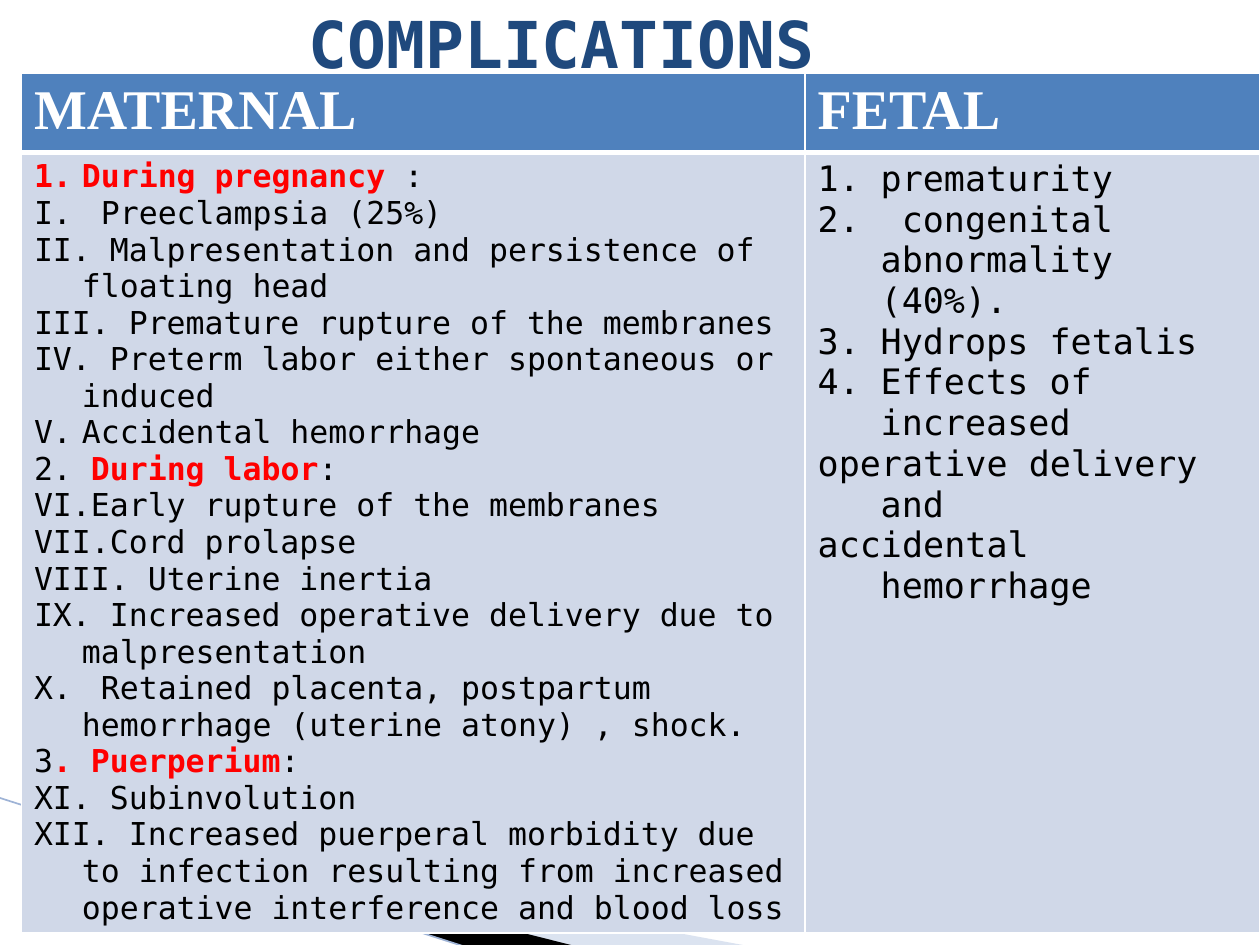
from lxml import etree
from pptx import Presentation
from pptx import util as u
from pptx.dml import color
from pptx.enum import shapes, text
from pptx.oxml import ns

COLORS = {
    "title": "1F497D", "header": "4F81BD", "body": "D0D8E8", "white": "FFFFFF",
    "black": "000000", "accent": "FF0000", "wave": "A7B9DB", "line": "9EB3D6",
}
MONO = "DejaVu Sans Mono"
SERIF = "Times New Roman"
PLAIN = {"name": MONO, "bold": False}
STRONG = {"name": MONO, "bold": True}
HEADING = {"name": SERIF, "bold": True, "size": u.Pt(32)}

PREGNANCY = [
    " Preeclampsia (25%)",
    " Malpresentation and persistence of floating head",
    " Premature rupture of the membranes",
    " Preterm labor either spontaneous or induced",
    "Accidental hemorrhage",
]
LABOR = [
    "Early rupture of the membranes",
    "Cord prolapse",
    " Uterine inertia",
    " Increased operative delivery due to malpresentation",
    " Retained placenta, postpartum hemorrhage (uterine atony) , shock.",
]
PUERPERIUM = [
    " Subinvolution",
    " Increased puerperal morbidity due to infection resulting from "
    "increased operative interference and blood loss",
]
FETAL = ["prematurity", " congenital abnormality (40%).", "Hydrops fetalis", "Effects of increased"]
FETAL_MORE = ["operative delivery and", "accidental hemorrhage"]


def rgb(name):
    return color.RGBColor.from_string(COLORS[name])


def child(parent, tag, **values):
    return etree.SubElement(parent, ns.qn(tag), {key: str(value) for key, value in values.items()})


def add_span(para, words, values, tint):
    span = para.add_run()
    span.text = words
    for key, value in values.items():
        setattr(span.font, key, value)
    span.font.color.rgb = rgb(tint)


def add_para(frame, spans, size, hang=0, number=None, start=1):
    first = frame.paragraphs[0]
    para = frame.add_paragraph() if first.runs else first
    props = para._p.get_or_add_pPr()
    props.set("marL", str(u.Inches(hang)))
    props.set("indent", str(-u.Inches(hang)))
    if number:
        child(props, "a:buAutoNum", type=number, startAt=start)
    for words, values, tint in spans:
        add_span(para, words, {"size": u.Pt(size), **values}, tint)


def add_list(frame, lines, size, hang, number=None, start=1):
    for line in lines:
        add_para(frame, [(line, PLAIN, "black")], size, hang, number, start)


def style_cell(cell, fill, top, bottom):
    props = cell._tc.get_or_add_tcPr()
    for side, width in {"L": 1, "R": 1, "T": top, "B": bottom}.items():
        line = child(props, f"a:ln{side}", w=u.Pt(width))
        child(child(line, "a:solidFill"), "a:srgbClr", val=COLORS["white"])
    cell.fill.solid()
    cell.fill.fore_color.rgb = rgb(fill)


def add_wave(page, points, fill, opacity=100):
    corners = [(u.Inches(x), u.Inches(y)) for x, y in points]
    builder = page.shapes.build_freeform(*corners[0])
    builder.add_line_segments(corners[1:], close=True)
    wave = builder.convert_to_shape()
    wave.shadow.inherit = False
    wave.fill.solid()
    wave.fill.fore_color.rgb = rgb(fill)
    wave.line.fill.background()
    if opacity < 100:
        tint = wave._element.spPr.find(ns.qn("a:solidFill"))[0]
        child(tint, "a:alpha", val=opacity * 1000)


def add_line(page, start, end):
    line = page.shapes.add_connector(
        shapes.MSO_CONNECTOR.STRAIGHT, *(u.Inches(value) for value in start + end))
    line.line.color.rgb = rgb("line")
    line.line.width = u.Pt(0.95)
    child(line._element.spPr, "a:effectLst")


def fill_maternal(frame):
    size, hang, roman = 18, 0.38, "romanUcPeriod"
    colon = (":", PLAIN, "black")
    add_para(frame, [("During pregnancy ", STRONG, "accent"), colon], size, hang, "arabicPeriod")
    add_list(frame, PREGNANCY, size, hang, roman)
    add_para(frame, [("2. ", PLAIN, "black"), ("During labor", STRONG, "accent"), colon], size, hang)
    add_list(frame, LABOR, size, hang, roman, len(PREGNANCY) + 1)
    add_para(frame, [("3", PLAIN, "black"), (". Puerperium", STRONG, "accent"), colon], size)
    add_list(frame, PUERPERIUM, size, hang, roman, len(PREGNANCY + LABOR) + 1)


def fill_fetal(frame):
    add_list(frame, FETAL, 20, 0.5, "arabicPeriod")
    add_list(frame, FETAL_MORE, 20, 0.5)


def add_complications(page):
    box = [u.Inches(value) for value in (0.17, 0.58, 9.83, 6.62)]
    table = page.shapes.add_table(2, 2, *box).table
    for column, width in zip(table.columns, (6.22, 3.61)):
        column.width = u.Inches(width)
    for row, height in zip(table.rows, (0.63, 5.99)):
        row.height = u.Inches(height)
    for index, (heading, fill_body) in enumerate(
            [("MATERNAL", fill_maternal), ("FETAL", fill_fetal)]):
        header, body = table.cell(0, index), table.cell(1, index)
        style_cell(header, "header", 1, 3)
        style_cell(body, "body", 3, 1)
        add_span(header.text_frame.paragraphs[0], heading, HEADING, "white")
        fill_body(body.text_frame)


def set_title(page, words):
    title = page.shapes.title
    place = {"left": 0.5, "top": 0, "width": 9, "height": 0.67}
    for key, value in place.items():
        setattr(title, key, u.Inches(value))
    frame = title.text_frame
    frame.word_wrap = True
    frame.auto_size = text.MSO_AUTO_SIZE.NONE
    frame.vertical_anchor = text.MSO_ANCHOR.MIDDLE
    para = frame.paragraphs[0]
    para.alignment = text.PP_ALIGN.LEFT
    para._p.get_or_add_pPr().set("marL", str(u.Inches(1.85)))
    add_span(para, words, {**STRONG, "size": u.Pt(36.9)}, "title")
    page.shapes._spTree.append(title._element)


def main():
    deck = Presentation()
    deck.slide_width, deck.slide_height = u.Inches(10), u.Inches(7.5)
    page = deck.slides.add_slide(deck.slide_layouts[5])
    add_wave(page, [(0.55, 6.51), (5.95, 7.51), (4.56, 7.51), (0.55, 6.5)], "wave", 40)
    add_wave(page, [(0.53, 6.49), (4.57, 7.51), (3.72, 7.52), (0.54, 6.5)], "black")
    add_line(page, (-0.01, 6.33), (3.71, 7.52))
    add_complications(page)
    set_title(page, "COMPLICATIONS")
    deck.save("out.pptx")


if __name__ == "__main__":
    main()
